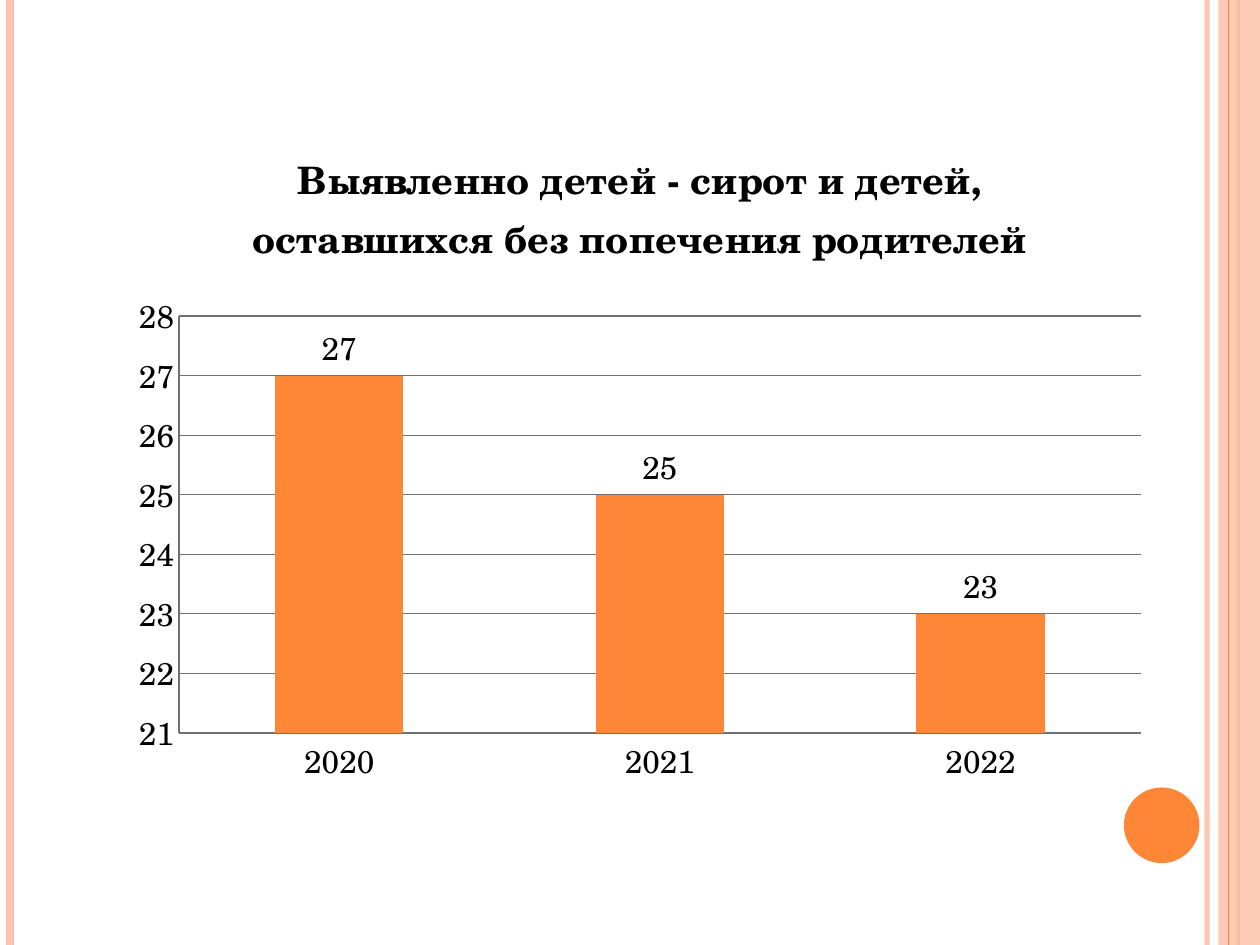
from lxml.etree import SubElement
from pptx import Presentation
from pptx.chart.data import CategoryChartData
from pptx.dml.color import RGBColor
from pptx.enum.chart import XL_CHART_TYPE, XL_LABEL_POSITION, XL_TICK_MARK
from pptx.enum.shapes import MSO_CONNECTOR, MSO_SHAPE
from pptx.oxml import parse_xml
from pptx.oxml.ns import nsdecls, qn
from pptx.util import Inches, Pt

HEADING = "Выявленно детей - сирот и детей, оставшихся без попечения родителей"
CHILDREN_BY_YEAR = {"2020": 27, "2021": 25, "2022": 23}
FONT = "TeX Gyre Schola"
ORANGE = RGBColor(0xFE, 0x86, 0x37)
PEACH = RGBColor(0xFE, 0xC3, 0xAE)
BLACK = RGBColor(0, 0, 0)
GRAY = RGBColor(0x70, 0x70, 0x70)
WIDTH, HEIGHT = Inches(10), Inches(7.5)

# x as share of width, colour, points, opacity in percent
STRIPES_BEHIND = [(0.958, PEACH, 3, 93), (0.008, PEACH, 4.5, 100), (0.983, ORANGE, 1.5, 100)]
STRIPES_FRONT = [(0.975, ORANGE, 0.75, 100)]
PLOT_AREA = {"x": 0.058, "y": 0.291, "w": 0.922, "h": 0.614}


def set_opacity(part, percent):
    """Make the solid colour of a shape or line partly transparent."""
    color = next(part._element.spPr.iter(qn("a:srgbClr")))
    SubElement(color, qn("a:alpha")).set("val", str(percent * 1000))


def add_stripes(slide, stripes):
    """Draw full-height vertical lines."""
    for share, color, points, opacity in stripes:
        x = int(WIDTH * share)
        stripe = slide.shapes.add_connector(MSO_CONNECTOR.STRAIGHT, x, 0, x, HEIGHT)
        stripe.line.color.rgb = color
        stripe.line.width = Pt(points)
        if opacity < 100:
            set_opacity(stripe, opacity)
        SubElement(stripe._element.spPr, qn("a:effectLst"))


def add_solid(slide, preset, left, top, width, height, color):
    """Add a borderless filled shape."""
    solid = slide.shapes.add_shape(preset, left, top, width, height)
    solid.shadow.inherit = False
    solid.fill.solid()
    solid.fill.fore_color.rgb = color
    solid.line.fill.background()
    return solid


def style_font(font, points, bold=False):
    """Apply the chart's typeface."""
    font.name, font.size, font.bold = FONT, Pt(points), bold
    font.color.rgb = BLACK


def add_children_chart(slide):
    """Add the column chart of children by year."""
    data = CategoryChartData()
    data.categories = list(CHILDREN_BY_YEAR)
    data.add_series(HEADING, list(CHILDREN_BY_YEAR.values()))
    chart = slide.shapes.add_chart(
        XL_CHART_TYPE.COLUMN_CLUSTERED, Inches(0.94), Inches(0.94), Inches(8.28), Inches(5.39), data
    ).chart
    style_font(chart.font, 18)
    chart.has_legend = False
    chart.has_title = True
    chart.chart_title.include_in_layout = False
    heading = chart.chart_title.text_frame
    heading.text = HEADING
    style_font(heading.paragraphs[0].font, 21.6, True)
    style_font(heading.paragraphs[0].runs[0].font, 21.6, True)

    for axis in (chart.category_axis, chart.value_axis):
        axis.major_tick_mark = axis.minor_tick_mark = XL_TICK_MARK.NONE
        axis.format.line.color.rgb = GRAY
        style_font(axis.tick_labels.font, 18)
    scale = chart.value_axis
    scale.minimum_scale, scale.maximum_scale, scale.major_unit = 21, 28, 1
    scale.major_gridlines.format.line.color.rgb = GRAY

    plot = chart.plots[0]
    plot.gap_width = 150
    plot.vary_by_categories = False
    columns = plot.series[0]
    columns.format.fill.solid()
    columns.format.fill.fore_color.rgb = ORANGE
    plot.has_data_labels = True
    labels = plot.data_labels
    labels.show_value = True
    labels.position = XL_LABEL_POSITION.OUTSIDE_END
    style_font(labels.font, 18)

    modes = "".join(f'<c:{side}Mode val="edge"/>' for side in "xy")
    shares = "".join(f'<c:{side} val="{share}"/>' for side, share in PLOT_AREA.items())
    layout = parse_xml(
        f'<c:layout {nsdecls("c")}><c:manualLayout><c:layoutTarget val="inner"/>'
        f"{modes}{shares}</c:manualLayout></c:layout>"
    )
    plot_area = chart._chartSpace.chart.plotArea
    for old in plot_area.findall(qn("c:layout")):
        plot_area.remove(old)
    plot_area.insert(0, layout)


def main():
    """Build and save the slide."""
    deck = Presentation()
    deck.slide_width, deck.slide_height = WIDTH, HEIGHT
    slide = deck.slides.add_slide(deck.slide_layouts[6])
    add_stripes(slide, STRIPES_BEHIND)
    band_left = int(WIDTH * 0.967)
    band = add_solid(slide, MSO_SHAPE.RECTANGLE, band_left, 0, WIDTH - band_left, HEIGHT, PEACH)
    set_opacity(band, 87)
    add_stripes(slide, STRIPES_FRONT)
    diameter = Inches(0.6)
    add_solid(slide, MSO_SHAPE.OVAL, Inches(8.92), Inches(6.25), diameter, diameter, ORANGE)
    add_children_chart(slide)
    deck.save("out.pptx")


if __name__ == "__main__":
    main()
